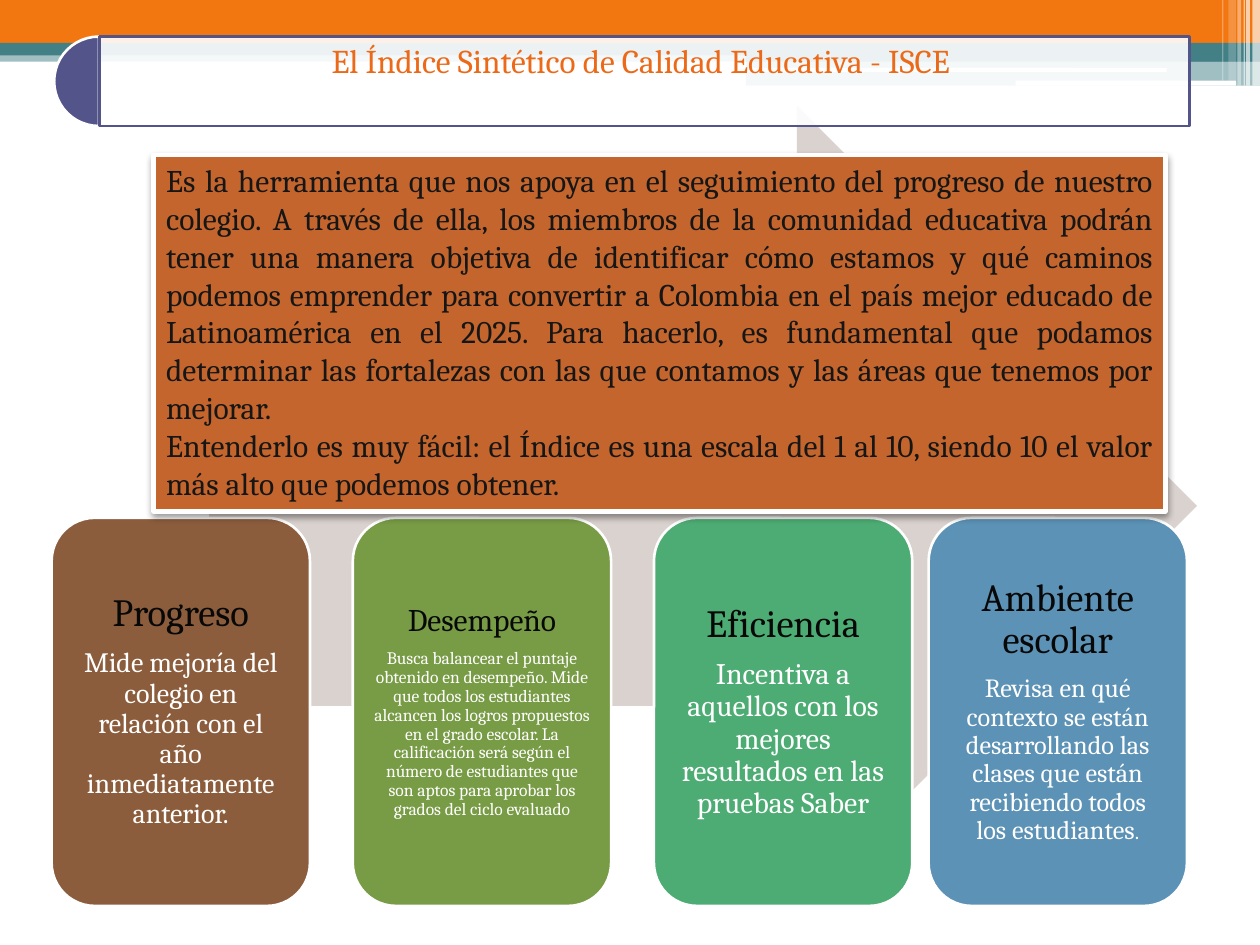
from lxml.etree import SubElement
from pptx import Presentation
from pptx.dml.color import RGBColor
from pptx.enum.shapes import MSO_SHAPE as Shape
from pptx.enum.text import MSO_ANCHOR as Anchor, PP_ALIGN as Align
from pptx.oxml.ns import qn
from pptx.util import Inches, Pt

WHITE = RGBColor(0xFF, 0xFF, 0xFF)
ORANGE = RGBColor(0xF3, 0x77, 0x11)
TEAL = RGBColor(0x43, 0x80, 0x86)
PURPLE = RGBColor(0x53, 0x54, 0x8A)
TITLE_ORANGE = RGBColor(0xEC, 0x69, 0x18)
ARROW_GREY = RGBColor(0xDA, 0xD2, 0xCE)
RUST = RGBColor(0xC4, 0x65, 0x2D)
BROWN = RGBColor(0x8B, 0x5D, 0x3D)
OLIVE = RGBColor(0x78, 0x9B, 0x45)
GREEN = RGBColor(0x4D, 0xAC, 0x73)
BLUE = RGBColor(0x5C, 0x92, 0xB5)
HEADING_BLACK = RGBColor(0x08, 0x08, 0x08)
BODY_BLACK = RGBColor(0x16, 0x16, 0x16)

COLUMNS, ROWS = 100, 75
FONT = "Cambria"

# Left, top, width, height in grid cells; colour; opacity in percent
BANDS = [
    (0, 4, 100, 0.9, TEAL, 50),
    (0, 0, 100, 3.4, ORANGE, 100),
    (0, 3.4, 100, 1, TEAL, 100),
    (59.2, 3.9, 40.8, 1, TEAL, 100),
    (59.2, 4.8, 40.8, 2, TEAL, 50),
]
ROUNDED_BARS = [(59.1, 5.4, 33.5, 0.3), (80.6, 6.4, 17.5, 0.4)]
# Left, width, height, opacity
STRIPES = [
    (99.4, 0.6, 6.8, 65),
    (98.9, 0.3, 6.8, 65),
    (98.7, 0.1, 6.8, 60),
    (98.2, 0.3, 6.8, 40),
    (97.5, 0.6, 6.4, 20),
    (97, 0.1, 6.4, 30),
]

TITLE = "El Índice Sintético de Calidad Educativa - ISCE \n"
SUMMARY = (
    "Es la herramienta que nos apoya en el seguimiento del progreso de nuestro colegio. "
    "A través de ella, los miembros de la comunidad educativa podrán tener una manera "
    "objetiva de identificar cómo estamos y qué caminos podemos emprender para convertir "
    "a Colombia en el país mejor educado de Latinoamérica en el 2025. Para hacerlo, es "
    "fundamental que podamos determinar las fortalezas con las que contamos y las áreas "
    "que tenemos por mejorar.\n"
    "Entenderlo es muy fácil: el Índice es una escala del 1 al 10, siendo 10 el valor "
    "más alto que podemos obtener."
)
# Left, colour, inset, heading, heading size, body runs with sizes
CARDS = [
    (4.1, BROWN, 0.09, "Progreso", 22,
     [("Mide mejoría del colegio en relación con el año inmediatamente anterior.", 16)]),
    (28, OLIVE, 0.07, "Desempeño", 18,
     [("Busca balancear el puntaje obtenido en desempeño. Mide que todos los estudiantes "
       "alcancen los logros propuestos en el grado escolar. La calificación será según el "
       "número de estudiantes que son aptos para aprobar los grados del ciclo evaluado", 10)]),
    (51.9, GREEN, 0.09, "Eficiencia", 22,
     [("Incentiva a aquellos con los mejores resultados en las pruebas Saber", 17)]),
    (73.7, BLUE, 0.09, "Ambiente escolar", 22,
     [("Revisa en qué contexto se están desarrollando las clases que están recibiendo "
       "todos los estudiantes", 15), (".", 12)]),
]


def write(paragraph, text, *, size, color):
    """Append text to a paragraph, turning each newline into a line break."""
    for index, line in enumerate(text.split("\n")):
        if index:
            paragraph.add_line_break()
        if line:
            run = paragraph.add_run()
            run.text = line
            run.font.name = FONT
            run.font.size = Pt(size)
            run.font.color.rgb = color


def set_opacity(shape, percent):
    color = shape.fill._xPr.find(qn("a:solidFill"))[0]
    SubElement(color, qn("a:alpha"), val=str(percent * 1000))


def cast_shadow(shape):
    """Drop a soft black shadow straight down."""
    effects = shape._element.spPr.find(qn("a:effectLst"))
    shadow = SubElement(effects, qn("a:outerShdw"), blurRad=str(Pt(4.1)), dist=str(Pt(2)),
                        dir="5400000", algn="ctr", rotWithShape="0")
    color = SubElement(shadow, qn("a:srgbClr"), val="000000")
    SubElement(color, qn("a:alpha"), val="40000")


class SlideBuilder:
    """Holds the slide and its grid of square cells."""

    def __init__(self, presentation):
        self.slide = presentation.slides.add_slide(presentation.slide_layouts[6])
        self.column = presentation.slide_width / COLUMNS
        self.row = presentation.slide_height / ROWS

    def shape(self, kind, left, top, width, height, fill, opacity=100, line=None, line_width=1.5):
        shape = self.slide.shapes.add_shape(
            kind, round(left * self.column), round(top * self.row),
            round(width * self.column), round(height * self.row))
        shape.shadow.inherit = False
        shape.fill.solid()
        shape.fill.fore_color.rgb = fill
        if opacity < 100:
            set_opacity(shape, opacity)
        if line is None:
            shape.line.fill.background()
        else:
            shape.line.color.rgb = line
            shape.line.width = Pt(line_width)
        return shape

    def centred_text(self, shape, inset, paragraphs):
        """Each paragraph is a list of (text, size, color) runs."""
        frame = shape.text_frame
        frame.word_wrap = True
        frame.vertical_anchor = Anchor.MIDDLE
        frame.margin_left = frame.margin_right = Inches(inset)
        frame.margin_top = frame.margin_bottom = Inches(inset)
        for index, runs in enumerate(paragraphs):
            paragraph = frame.add_paragraph() if index else frame.paragraphs[0]
            paragraph.alignment = Align.CENTER
            paragraph.line_spacing = 0.9
            paragraph.space_after = Pt(round(runs[0][1] * 0.35, 1))
            for text, size, color in runs:
                write(paragraph, text, size=size, color=color)

    def header(self):
        for *box, color, opacity in BANDS:
            self.shape(Shape.RECTANGLE, *box, color, opacity)
        for box in ROUNDED_BARS:
            self.shape(Shape.ROUNDED_RECTANGLE, *box, WHITE)
        for left, width, height, opacity in STRIPES:
            self.shape(Shape.RECTANGLE, left, 0, width, height, WHITE, opacity)

    def card(self, left, color, inset, heading, heading_size, body):
        card = self.shape(Shape.ROUNDED_RECTANGLE, left, 41.1, 20.5, 30.8, color, line=WHITE)
        self.centred_text(card, inset, [
            [(heading, heading_size, HEADING_BLACK)],
            [(text, size, WHITE) for text, size in body],
        ])

    def summary(self):
        box = self.shape(Shape.RECTANGLE, 12.2, 12.3, 80.3, 28.3, RUST, line=WHITE, line_width=2.5)
        cast_shadow(box)
        frame = box.text_frame
        frame.word_wrap = True
        frame.vertical_anchor = Anchor.TOP
        paragraph = frame.paragraphs[0]
        paragraph.alignment = Align.JUSTIFY
        write(paragraph, SUMMARY, size=18, color=BODY_BLACK)

    def title(self):
        pie = self.shape(Shape.PIE, 4.3, 2.9, 7.1, 7.1, PURPLE, line=WHITE)
        pie.adjustments[0], pie.adjustments[1] = 54, 162
        banner = self.shape(Shape.RECTANGLE, 7.9, 2.9, 86.5, 7.1, WHITE, 90, line=PURPLE)
        self.centred_text(banner, 0.08, [[(TITLE, 19, TITLE_ORANGE)]])


def main():
    presentation = Presentation()
    presentation.slide_width, presentation.slide_height = Inches(10), Inches(7.5)
    builder = SlideBuilder(presentation)
    builder.header()
    builder.shape(Shape.RIGHT_ARROW, 16.6, 8.4, 78.4, 63.5, ARROW_GREY)
    for card in CARDS:
        builder.card(*card)
    builder.summary()
    builder.title()
    presentation.save("out.pptx")


if __name__ == "__main__":
    main()
